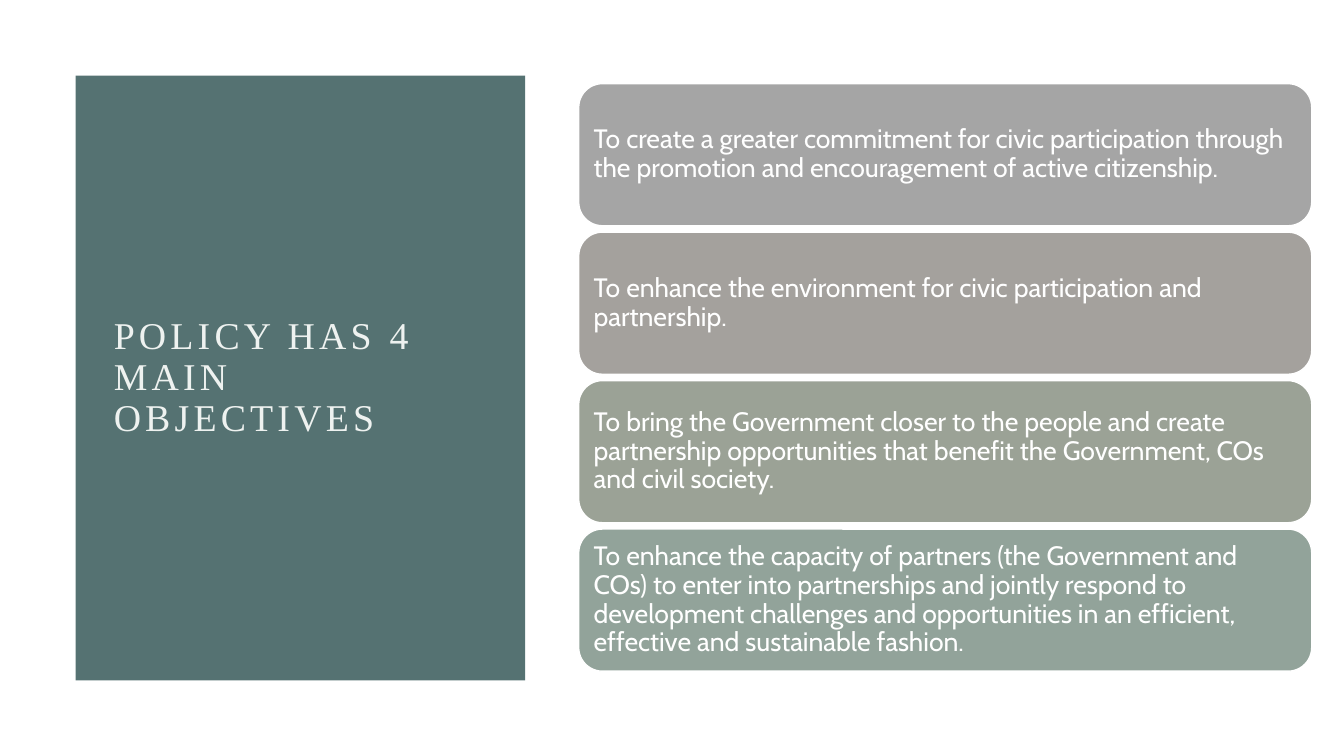
from pptx import Presentation
from pptx.dml.color import RGBColor
from pptx.enum import shapes, text
from pptx.util import Inches, Pt

OBJECTIVES = [
    ("A5A5A5", "To create a greater commitment for civic participation through "
               "the promotion and encouragement of active citizenship."),
    ("A4A19D", "To enhance the environment for civic participation and partnership."),
    ("9BA296", "To bring the Government closer to the people and create partnership "
               "opportunities that benefit the Government, COs and civil society."),
    ("92A39A", "To enhance the capacity of partners (the Government and COs) to enter "
               "into partnerships and jointly respond to development challenges and "
               "opportunities in an efficient, effective and sustainable fashion."),
]
CARD_TOP, CARD_PITCH = 0.83, 1.473


def color(hex_code):
    return RGBColor.from_string(hex_code)


def add_box(s, kind, left, top, width, height, fill):
    sp = s.shapes.add_shape(kind, Inches(left), Inches(top), Inches(width), Inches(height))
    sp.shadow.inherit = False
    sp.fill.solid()
    sp.fill.fore_color.rgb = color(fill)
    sp.line.fill.background()
    return sp


def write(sp, words, font, size, hex_code):
    """Put one left-aligned, vertically centred paragraph in a shape."""
    tf = sp.text_frame
    tf.word_wrap = True
    tf.vertical_anchor = text.MSO_ANCHOR.MIDDLE
    p = tf.paragraphs[0]
    p.text = words
    p.alignment = text.PP_ALIGN.LEFT
    p.line_spacing = 0.9
    p.font.name = font
    p.font.size = Pt(size)
    p.font.color.rgb = color(hex_code)
    return p


def add_title(s, words):
    sp = s.shapes.add_textbox(Inches(1.03), Inches(1.5), Inches(3.89), Inches(4.5))
    p = write(sp, words, "Times New Roman", 27, "EEF2F0")
    p.runs[0].font._element.set("spc", "300")


def add_card(s, top, fill, words):
    sp = add_box(s, shapes.MSO_SHAPE.ROUNDED_RECTANGLE, 5.74, top, 7.27, 1.41, fill)
    sp.line.color.rgb = color("FFFFFF")
    sp.line.width = Pt(1)
    tf = sp.text_frame
    tf.margin_left = tf.margin_right = tf.margin_top = tf.margin_bottom = Inches(0.08)
    write(sp, words, "Cabin", 19, "FFFFFF")


def main():
    prs = Presentation()
    prs.slide_width, prs.slide_height = Inches(13.33), Inches(7.5)
    s = prs.slides.add_slide(prs.slide_layouts[6])
    add_box(s, shapes.MSO_SHAPE.RECTANGLE, 0.75, 0.75, 4.46, 6, "557272")
    add_title(s, "POLICY HAS 4 MAIN OBJECTIVES")
    for i, (fill, words) in enumerate(OBJECTIVES):
        add_card(s, CARD_TOP + i * CARD_PITCH, fill, words)
    prs.save("out.pptx")


if __name__ == "__main__":
    main()
